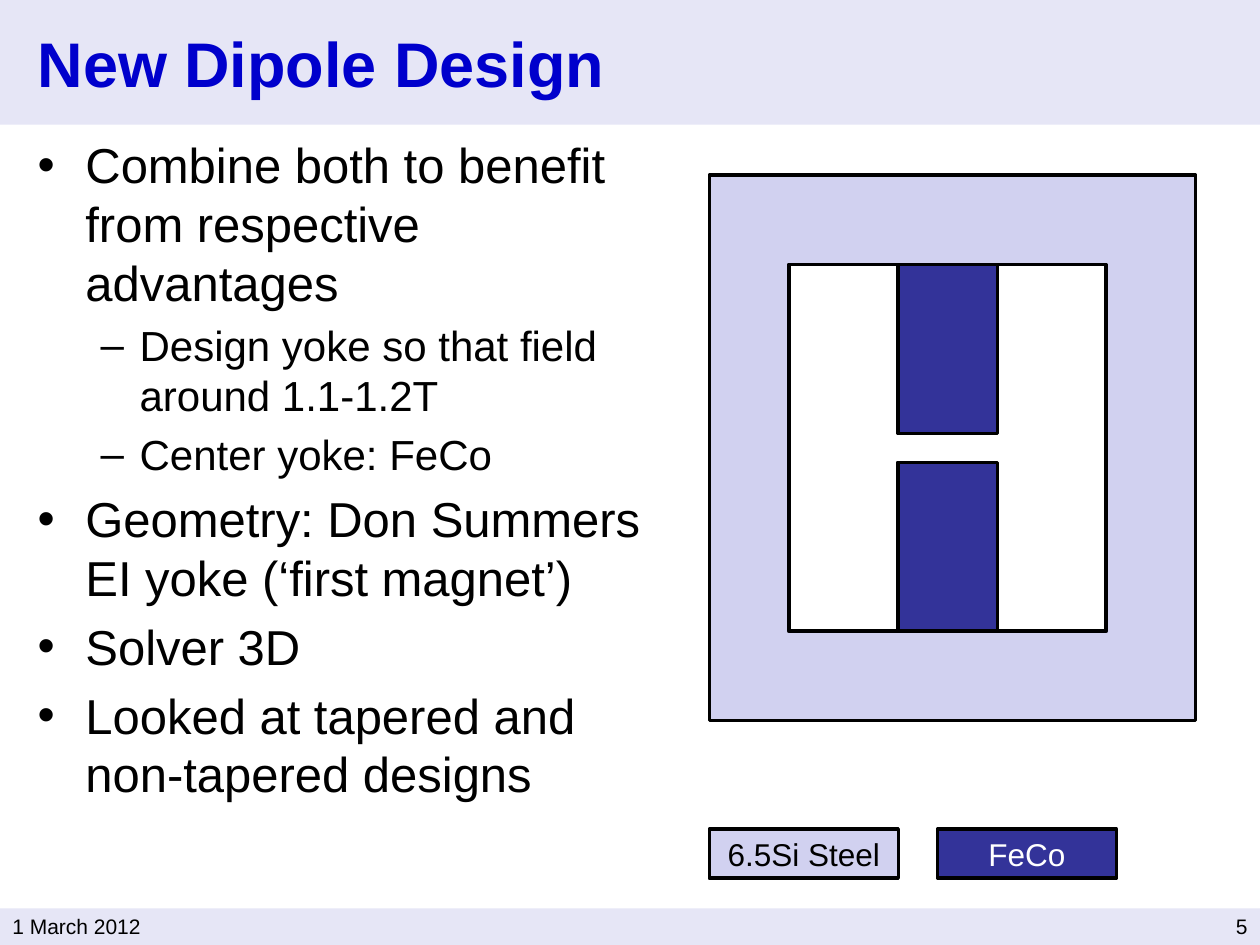
import pptx
import pptx.dml.color
import pptx.enum.shapes
import pptx.enum.text
import pptx.oxml
import pptx.oxml.ns
import pptx.util
from lxml import etree

Inches = pptx.util.Inches
Pt = pptx.util.Pt
RGBColor = pptx.dml.color.RGBColor
ALIGN = pptx.enum.text.PP_ALIGN
ANCHOR = pptx.enum.text.MSO_ANCHOR
qn = pptx.oxml.ns.qn

BLACK = RGBColor(0, 0, 0)
WHITE = RGBColor(255, 255, 255)
TITLE_BLUE = RGBColor(0, 0, 204)
BAND_BLUE = RGBColor(0x75, 0x75, 0xD1)
STEEL = RGBColor(0xD1, 0xD1, 0xF0)
FECO = RGBColor(0x33, 0x33, 0x99)

SLIDE_WIDTH, SLIDE_HEIGHT = 10, 7.5
TITLE = "New Dipole Design"
DATE = "1 March 2012"
SLIDE_NUMBER = "5"
BULLETS = [
    (0, "Combine both to benefit from respective advantages"),
    (1, "Design yoke so that field around 1.1-1.2T"),
    (1, "Center yoke: FeCo"),
    (0, "Geometry: Don Summers EI yoke (‘first magnet’)"),
    (0, "Solver 3D"),
    (0, "Looked at tapered and non-tapered designs"),
]
LEVELS = [
    {"symbol": "•", "size": 28, "margin": 0.38, "indent": -0.38},
    {"symbol": "–", "size": 24, "margin": 0.81, "indent": -0.31},
]
BANDS = [(0, 0.99), (7.21, 0.29)]
YOKE = (5.63, 1.39, 3.86, 4.33)
WINDOW = (6.26, 2.1, 2.52, 2.91)
POLE_WIDTH, POLE_HEIGHT = 0.79, 1.34
LEGEND_TOP, LEGEND_HEIGHT, LEGEND_GAP = 6.58, 0.39, 0.31
LEGEND = [("6.5Si Steel", 1.5, STEEL, BLACK), ("FeCo", 1.42, FECO, WHITE)]


def set_values(target, values):
    for name, value in values.items():
        setattr(target, name, value)


def style_font(paragraph, size, color=BLACK, bold=False):
    set_values(paragraph.font, {"name": "Arial", "size": Pt(size), "bold": bold})
    paragraph.font.color.rgb = color


def add_rectangle(slide, box, fill, outlined=True):
    shape = slide.shapes.add_shape(
        pptx.enum.shapes.MSO_SHAPE.RECTANGLE, *map(Inches, box))
    shape.shadow.inherit = False
    shape.fill.solid()
    shape.fill.fore_color.rgb = fill
    if outlined:
        shape.line.color.rgb = BLACK
        shape.line.width = Pt(2)
    else:
        shape.line.fill.background()
    return shape


def add_text_box(slide, box, anchor=ANCHOR.TOP):
    frame = slide.shapes.add_textbox(*map(Inches, box)).text_frame
    set_values(frame, {"word_wrap": True, "vertical_anchor": anchor})
    return frame


def write_line(frame, text, size, color=BLACK, align=ALIGN.LEFT, bold=False):
    paragraph = frame.paragraphs[0]
    set_values(paragraph, {"text": text, "alignment": align})
    style_font(paragraph, size, color, bold)


def add_bands(slide):
    for top, height in BANDS:
        band = add_rectangle(slide, (0, top, SLIDE_WIDTH, height), BAND_BLUE, False)
        color = band.fill._xPr.find(qn("a:solidFill")).find(qn("a:srgbClr"))
        etree.SubElement(color, qn("a:alpha"), val="18000")


def add_bullets(slide):
    frame = add_text_box(slide, (0.2, 1.02, 5.04, 6.2))
    for index, (depth, text) in enumerate(BULLETS):
        level = LEVELS[depth]
        paragraph = frame.add_paragraph() if index else frame.paragraphs[0]
        set_values(paragraph, {"text": text, "level": depth})
        if index:
            paragraph.space_before = Pt(level["size"] * 0.2)
        properties = paragraph._p.get_or_add_pPr()
        properties.set("marL", str(Inches(level["margin"])))
        properties.set("indent", str(Inches(level["indent"])))
        etree.SubElement(properties, qn("a:buFont"), typeface="Arial")
        etree.SubElement(properties, qn("a:buChar"), char=level["symbol"])
        style_font(paragraph, level["size"])


def add_magnet(slide):
    add_rectangle(slide, YOKE, STEEL)
    add_rectangle(slide, WINDOW, WHITE)
    left, top, width, height = WINDOW
    pole_left = left + (width - POLE_WIDTH) / 2
    for pole_top in (top, top + height - POLE_HEIGHT):
        add_rectangle(slide, (pole_left, pole_top, POLE_WIDTH, POLE_HEIGHT), FECO)


def add_legend(slide):
    left = YOKE[0]
    for label, width, fill, color in LEGEND:
        key = add_rectangle(slide, (left, LEGEND_TOP, width, LEGEND_HEIGHT), fill)
        key.text_frame.vertical_anchor = ANCHOR.MIDDLE
        write_line(key.text_frame, label, 18, color, ALIGN.CENTER)
        left += width + LEGEND_GAP


def main():
    presentation = pptx.Presentation()
    set_values(presentation, {"slide_width": Inches(SLIDE_WIDTH),
                              "slide_height": Inches(SLIDE_HEIGHT)})
    slide = presentation.slides.add_slide(presentation.slide_layouts[6])
    add_bands(slide)
    write_line(add_text_box(slide, (8.19, 7.2, 1.81, 0.3)),
               SLIDE_NUMBER, 12, align=ALIGN.RIGHT)
    write_line(add_text_box(slide, (0, 7.2, 1.81, 0.3)), DATE, 12)
    write_line(add_text_box(slide, (0.2, 0.07, 7.17, 0.85), ANCHOR.MIDDLE),
               TITLE, 36, TITLE_BLUE, bold=True)
    add_bullets(slide)
    add_magnet(slide)
    add_legend(slide)
    presentation.save("out.pptx")


if __name__ == "__main__":
    main()
